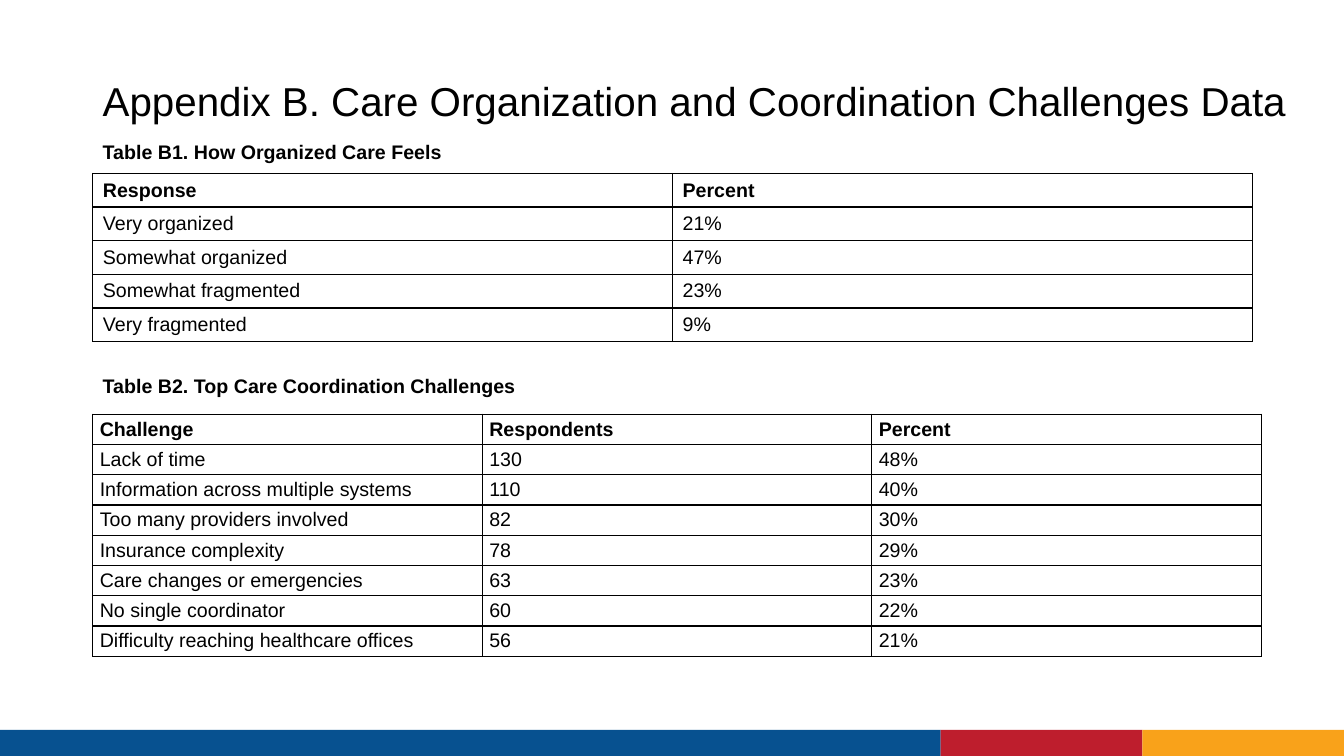
import pptx
import pptx.util
import pptx.dml.color
import pptx.enum.shapes
import pptx.enum.text
import pptx.oxml
import pptx.oxml.ns

Inches = pptx.util.Inches
Pt = pptx.util.Pt
ANCHOR = pptx.enum.text.MSO_ANCHOR

BLACK = "000000"
LEFT = 0.92
FOOTER_TOP, FOOTER_HEIGHT = 7.24, 0.27
FOOTER_BANDS = [
    (0, 9.33, "075190"),
    (9.33, 2, "BE1E2D"),
    (11.33, 2, "F9A21A"),
]
TITLE = "Appendix B. Care Organization and Coordination Challenges Data"
SECTIONS = [
    {
        "caption": "Table B1. How Organized Care Feels",
        "caption_top": 1.34,
        "top": 1.72,
        "width": 11.5,
        "height": 1.67,
        "insets": (0.1, 0.05),
        "rows": [
            ("Response", "Percent"),
            ("Very organized", "21%"),
            ("Somewhat organized", "47%"),
            ("Somewhat fragmented", "23%"),
            ("Very fragmented", "9%"),
        ],
    },
    {
        "caption": "Table B2. Top Care Coordination Challenges",
        "caption_top": 3.66,
        "top": 4.11,
        "width": 11.59,
        "height": 2.4,
        "insets": (0.07, 0.03),
        "rows": [
            ("Challenge", "Respondents", "Percent"),
            ("Lack of time", "130", "48%"),
            ("Information across multiple systems", "110", "40%"),
            ("Too many providers involved", "82", "30%"),
            ("Insurance complexity", "78", "29%"),
            ("Care changes or emergencies", "63", "23%"),
            ("No single coordinator", "60", "22%"),
            ("Difficulty reaching healthcare offices", "56", "21%"),
        ],
    },
]


def color(value):
    return pptx.dml.color.RGBColor.from_string(value)


def apply(target, values):
    for name, value in values.items():
        setattr(target, name, value)


def write(frame, text, size, bold=False):
    paragraph = frame.paragraphs[0]
    run = paragraph.add_run()
    run.text = text
    apply(run.font, {"name": "Arial", "size": Pt(size), "bold": bold})
    run.font.color.rgb = color(BLACK)
    return paragraph


def add_text(slide, text, top, width, height, size, bold=False, anchor=ANCHOR.TOP):
    box = slide.shapes.add_textbox(*map(Inches, (LEFT, top, width, height)))
    apply(box.text_frame, {"word_wrap": True, "vertical_anchor": anchor})
    return write(box.text_frame, text, size, bold)


def add_borders(cell):
    properties = cell._tc.get_or_add_tcPr()
    for position, side in enumerate(("lnL", "lnR", "lnT", "lnB")):
        border = pptx.oxml.parse_xml(
            f'<a:{side} {pptx.oxml.ns.nsdecls("a")} w="{Pt(1)}">'
            f'<a:solidFill><a:srgbClr val="{BLACK}"/></a:solidFill></a:{side}>'
        )
        properties.insert(position, border)


def add_data_table(slide, section):
    rows = section["rows"]
    columns = len(rows[0])
    place = map(Inches, (LEFT, section["top"], section["width"], section["height"]))
    table = slide.shapes.add_table(len(rows), columns, *place).table
    apply(table, {"first_row": False, "horz_banding": False})
    for column in table.columns:
        column.width = Inches(section["width"] / columns)
    for row in table.rows:
        row.height = Inches(section["height"] / len(rows))
    side, end = map(Inches, section["insets"])
    cell_format = {
        "margin_left": side,
        "margin_right": side,
        "margin_top": end,
        "margin_bottom": end,
        "vertical_anchor": ANCHOR.MIDDLE,
    }
    for row_index, row in enumerate(rows):
        for column_index, text in enumerate(row):
            cell = table.cell(row_index, column_index)
            apply(cell, cell_format)
            cell.fill.background()
            add_borders(cell)
            write(cell.text_frame, text, 14, bold=row_index == 0)


def main():
    deck = pptx.Presentation()
    apply(deck, {"slide_width": Inches(13.33), "slide_height": Inches(7.5)})
    slide = deck.slides.add_slide(deck.slide_layouts[6])

    for left, width, fill in FOOTER_BANDS:
        band = slide.shapes.add_shape(
            pptx.enum.shapes.MSO_SHAPE.RECTANGLE,
            *map(Inches, (left, FOOTER_TOP, width, FOOTER_HEIGHT)),
        )
        band.shadow.inherit = False
        band.fill.solid()
        band.fill.fore_color.rgb = color(fill)
        band.line.fill.background()

    title = add_text(slide, TITLE, 0.68, 12.42, 0.61, 28.8, anchor=ANCHOR.BOTTOM)
    title.line_spacing = 0.9

    for section in SECTIONS:
        add_text(slide, section["caption"], section["caption_top"], 6.67, 0.34, 14, bold=True)
        add_data_table(slide, section)

    deck.save("out.pptx")


if __name__ == "__main__":
    main()
